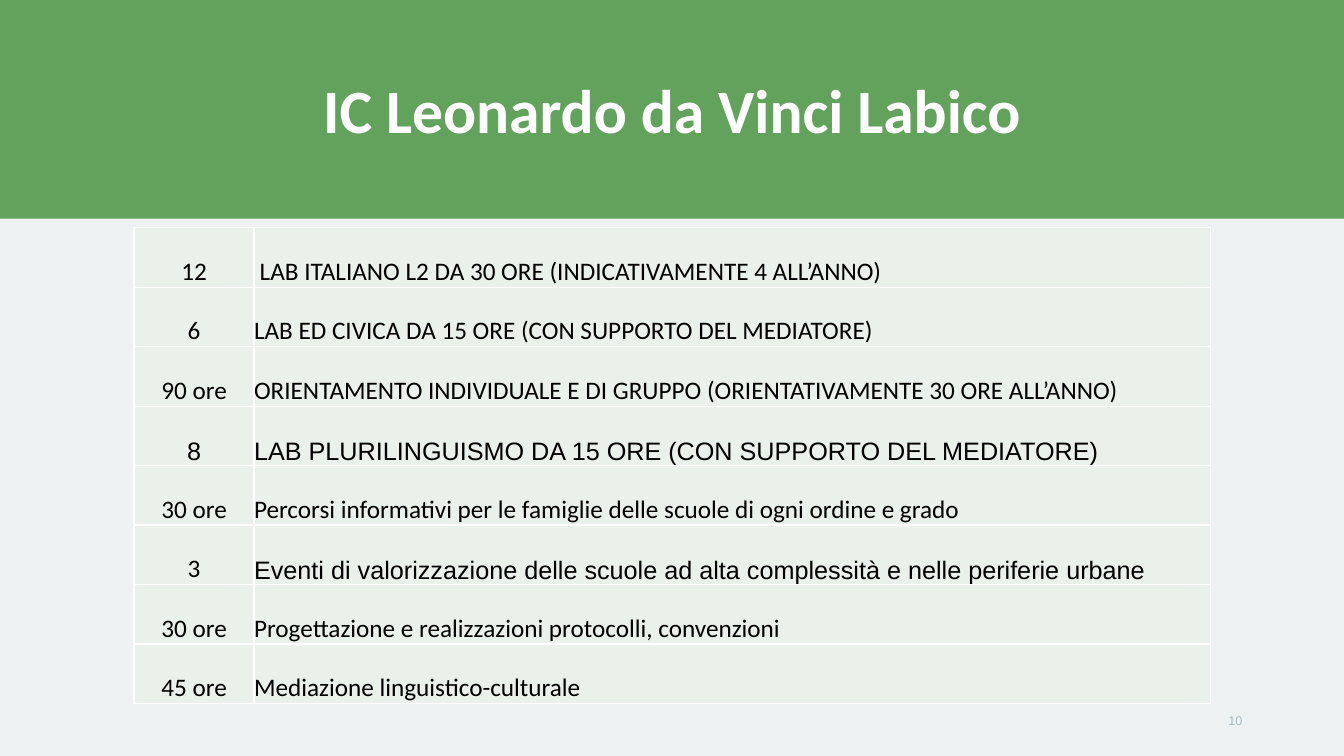
from lxml import etree
from pptx import Presentation
from pptx.dml.color import RGBColor
from pptx.enum import shapes, text
from pptx.oxml import ns
from pptx.util import Inches, Pt

GREEN = RGBColor(0x62, 0xA2, 0x5D)
PALE_GREEN = RGBColor(0xEA, 0xF0, 0xEA)
BACKGROUND = RGBColor(0xED, 0xF1, 0xF2)
GREY = RGBColor(0xA7, 0xBB, 0xC0)
WHITE = RGBColor(0xFF, 0xFF, 0xFF)
BLACK = RGBColor(0, 0, 0)

BODY, ALTERNATE = "Calibri", "Arial"
CENTER, LEFT, RIGHT = text.PP_ALIGN.CENTER, text.PP_ALIGN.LEFT, text.PP_ALIGN.RIGHT

ACTIVITIES = [
    ("12", BODY, " LAB ITALIANO L2 DA 30 ORE (INDICATIVAMENTE 4 ALL’ANNO)", BODY),
    ("6", BODY, "LAB ED CIVICA DA 15 ORE (CON SUPPORTO DEL MEDIATORE)", BODY),
    ("90 ore", BODY,
     "ORIENTAMENTO INDIVIDUALE E DI GRUPPO (ORIENTATIVAMENTE 30 ORE ALL’ANNO)", BODY),
    ("8", ALTERNATE, "LAB PLURILINGUISMO DA 15 ORE (CON SUPPORTO DEL MEDIATORE)", ALTERNATE),
    ("30 ore", BODY,
     "Percorsi informativi per le famiglie delle scuole di ogni ordine e grado", BODY),
    ("3", BODY,
     "Eventi di valorizzazione delle scuole ad alta complessità e nelle periferie urbane",
     ALTERNATE),
    ("30 ore", BODY, "Progettazione e realizzazioni protocolli, convenzioni", BODY),
    ("45 ore", BODY, "Mediazione linguistico-culturale", BODY),
]


def write(frame, words, font, size, color, align, bold=False):
    paragraph = frame.paragraphs[0]
    paragraph.text = words
    paragraph.alignment = align
    paragraph.font.name = font
    paragraph.font.size = Pt(size)
    paragraph.font.color.rgb = color
    paragraph.font.bold = bold
    return paragraph


def add_band(slide, width, height):
    band = slide.shapes.add_shape(shapes.MSO_SHAPE.RECTANGLE, 0, 0, width, height)
    band.shadow.inherit = False
    band.fill.solid()
    band.fill.fore_color.rgb = GREEN
    band.line.fill.background()


def add_label(slide, left, top, width, height, *style, **options):
    frame = slide.shapes.add_textbox(
        Inches(left), Inches(top), Inches(width), Inches(height)).text_frame
    frame.word_wrap = True
    frame.vertical_anchor = text.MSO_ANCHOR.MIDDLE
    return write(frame, *style, **options)


def add_borders(cell):
    properties = cell._tc.get_or_add_tcPr()
    for position, side in enumerate(("lnL", "lnR", "lnT", "lnB")):
        border = etree.Element(ns.qn(f"a:{side}"), w=str(Pt(1)))
        fill = etree.SubElement(border, ns.qn("a:solidFill"))
        etree.SubElement(fill, ns.qn("a:srgbClr"), val=str(WHITE))
        properties.insert(position, border)


def fill_cell(cell, words, font, align):
    cell.margin_left = cell.margin_right = cell.margin_top = cell.margin_bottom = 0
    cell.vertical_anchor = text.MSO_ANCHOR.BOTTOM
    cell.fill.solid()
    cell.fill.fore_color.rgb = PALE_GREEN
    write(cell.text_frame, words, font, 18, BLACK, align)
    add_borders(cell)


def add_activities(slide):
    table = slide.shapes.add_table(
        len(ACTIVITIES), 2, Inches(1.33), Inches(2.26), Inches(10.68), Inches(4.72)).table
    table.first_row = table.horz_banding = False
    table.columns[0].width = Inches(1.19)
    table.columns[1].width = Inches(9.49)
    for row, (amount, amount_font, activity, activity_font) in enumerate(ACTIVITIES):
        fill_cell(table.cell(row, 0), amount, amount_font, CENTER)
        fill_cell(table.cell(row, 1), activity, activity_font, LEFT)


def main():
    deck = Presentation()
    deck.slide_width = Inches(13.33)
    deck.slide_height = Inches(7.5)
    slide = deck.slides.add_slide(deck.slide_layouts[6])
    slide.background.fill.solid()
    slide.background.fill.fore_color.rgb = BACKGROUND
    add_band(slide, deck.slide_width, Inches(2.17))
    title = add_label(slide, 0.92, 0.4, 11.5, 1.45,
                      "IC Leonardo da Vinci Labico", BODY, 44, WHITE, CENTER, bold=True)
    title.line_spacing = 0.9
    add_label(slide, 9.42, 6.95, 3, 0.4, "10", ALTERNATE, 9, GREY, RIGHT)
    add_activities(slide)
    deck.save("out.pptx")


if __name__ == "__main__":
    main()
